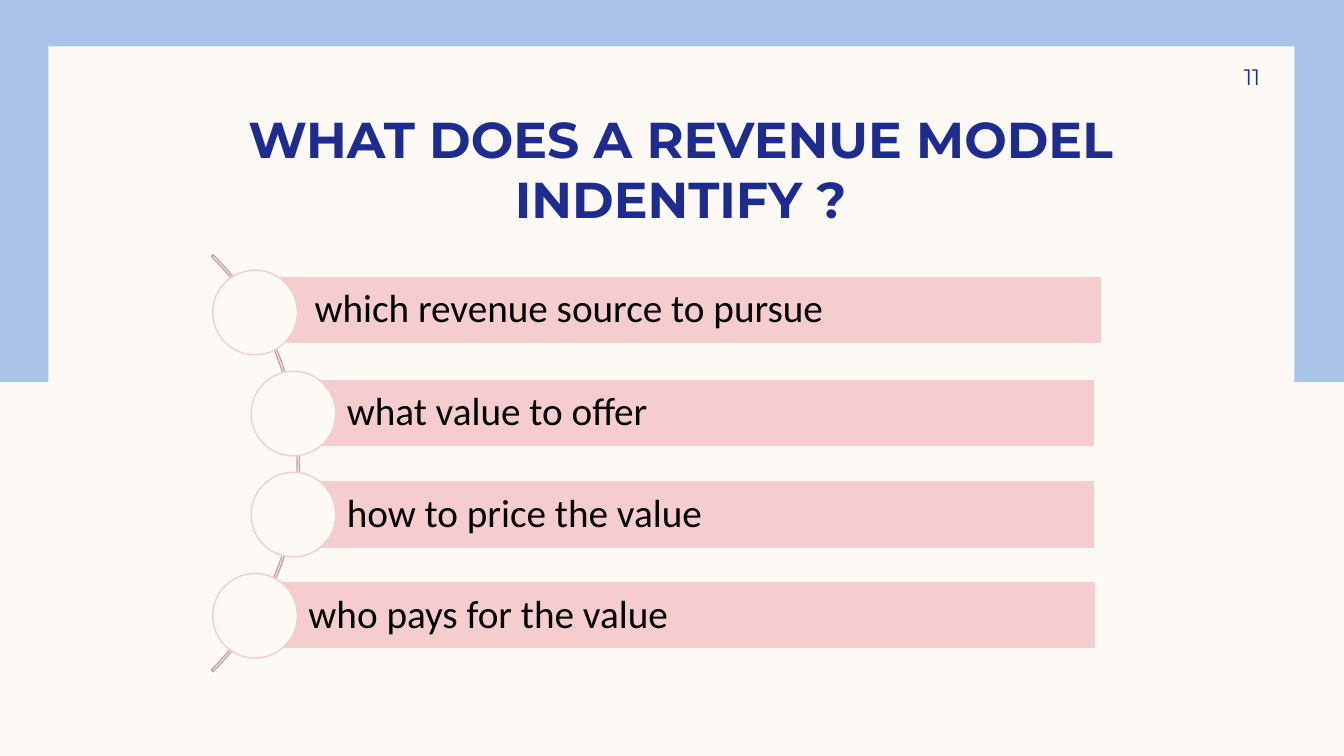
from pptx import Presentation
from pptx.dml.color import RGBColor
from pptx.enum.shapes import MSO_SHAPE as SHAPE
from pptx.enum.text import MSO_ANCHOR as ANCHOR, MSO_AUTO_SIZE as AUTO_SIZE, PP_ALIGN as ALIGN
from pptx.util import Inches, Pt

COLORS = {
    "cream": "FDFAF6",
    "blue": "AAC3E8",
    "navy": "1F2C8F",
    "pink": "F5CDCE",
    "mauve": "C4A4A5",
    "black": "000000",
}

# text, bar left, bar top, bar width, circle left
QUESTIONS = [
    ("which revenue source to pursue", 2.59, 2.74, 8.34, 2.11),
    ("what value to offer", 2.91, 3.76, 7.95, 2.49),
    ("how to price the value", 2.91, 4.77, 7.95, 2.49),
    ("who pays for the value", 2.53, 5.77, 8.34, 2.11),
]
BAR_HEIGHT = 0.67
CIRCLE_SIZE = 0.84
FIRST_CIRCLE_TOP, CIRCLE_STEP = 2.68, 1.003


def rgb(name):
    return RGBColor.from_string(COLORS[name])


def add_shape(s, kind, left, top, width, height, fill=None, line=None):
    sp = s.shapes.add_shape(kind, Inches(left), Inches(top), Inches(width), Inches(height))
    sp.shadow.inherit = False
    if fill:
        sp.fill.solid()
        sp.fill.fore_color.rgb = rgb(fill)
    else:
        sp.fill.background()
    if line:
        sp.line.color.rgb = rgb(line)
        sp.line.width = Pt(1)
    else:
        sp.line.fill.background()
    return sp


def write(sp, text, size, font="Montserrat", color="navy", bold=False, align=ALIGN.LEFT,
          anchor=ANCHOR.MIDDLE, insets=(0.1, 0.05, 0.1, 0.05), spacing=None):
    """Fill a shape with one formatted paragraph; insets run left, top, right, bottom."""
    tf = sp.text_frame
    tf.word_wrap = True
    tf.auto_size = AUTO_SIZE.NONE
    tf.vertical_anchor = anchor
    tf.margin_left, tf.margin_top, tf.margin_right, tf.margin_bottom = map(Inches, insets)
    p = tf.paragraphs[0]
    p.alignment = align
    p.line_spacing = spacing
    r = p.add_run()
    r.text = text
    r.font.name = font
    r.font.size = Pt(size)
    r.font.bold = bold
    r.font.color.rgb = rgb(color)


def add_frame(s):
    add_shape(s, SHAPE.RECTANGLE, -0.03, 0, 13.36, 3.79, fill="blue")
    add_shape(s, SHAPE.RECTANGLE, 0.48, 0.46, 12.36, 6.59, fill="cream")


def add_title(s, text):
    title = s.shapes.title
    title.left, title.top, title.width, title.height = map(Inches, (1, 1.16, 11.5, 1.11))
    write(title, text, 36, bold=True, align=ALIGN.CENTER, anchor=ANCHOR.BOTTOM,
          insets=(0.1, 0, 0.1, 0))


def add_page_number(s, number):
    box = s.shapes.add_textbox(Inches(11.33), Inches(0.5), Inches(1.17), Inches(0.52))
    write(box, number, 16, align=ALIGN.RIGHT, insets=(0.1, 0.05, 0, 0.05))


def add_curved_list(s):
    arc = add_shape(s, SHAPE.BLOCK_ARC, -2.88, 1.67, 5.85, 5.85, line="mauve")
    for i, value in enumerate((189, 27, 0.004)):
        arc.adjustments[i] = value
    for i, (text, left, top, width, circle_left) in enumerate(QUESTIONS):
        bar = add_shape(s, SHAPE.RECTANGLE, left, top, width, BAR_HEIGHT,
                        fill="pink", line="cream")
        write(bar, text, 28, font="Calibri", color="black",
              insets=(0.53, 0.08, 0.08, 0.08), spacing=0.9)
        add_shape(s, SHAPE.OVAL, circle_left, FIRST_CIRCLE_TOP + i * CIRCLE_STEP,
                  CIRCLE_SIZE, CIRCLE_SIZE, fill="cream", line="pink")


def main():
    prs = Presentation()
    prs.slide_width, prs.slide_height = Inches(13.33), Inches(7.5)
    s = prs.slides.add_slide(prs.slide_layouts[5])
    s.background.fill.solid()
    s.background.fill.fore_color.rgb = rgb("cream")
    add_frame(s)
    # Bring the title in front of the frame
    s.shapes._spTree.append(s.shapes.title._element)
    add_title(s, "WHAT DOES A REVENUE MODEL INDENTIFY ?")
    add_page_number(s, "11")
    add_curved_list(s)
    prs.save("out.pptx")


if __name__ == "__main__":
    main()
